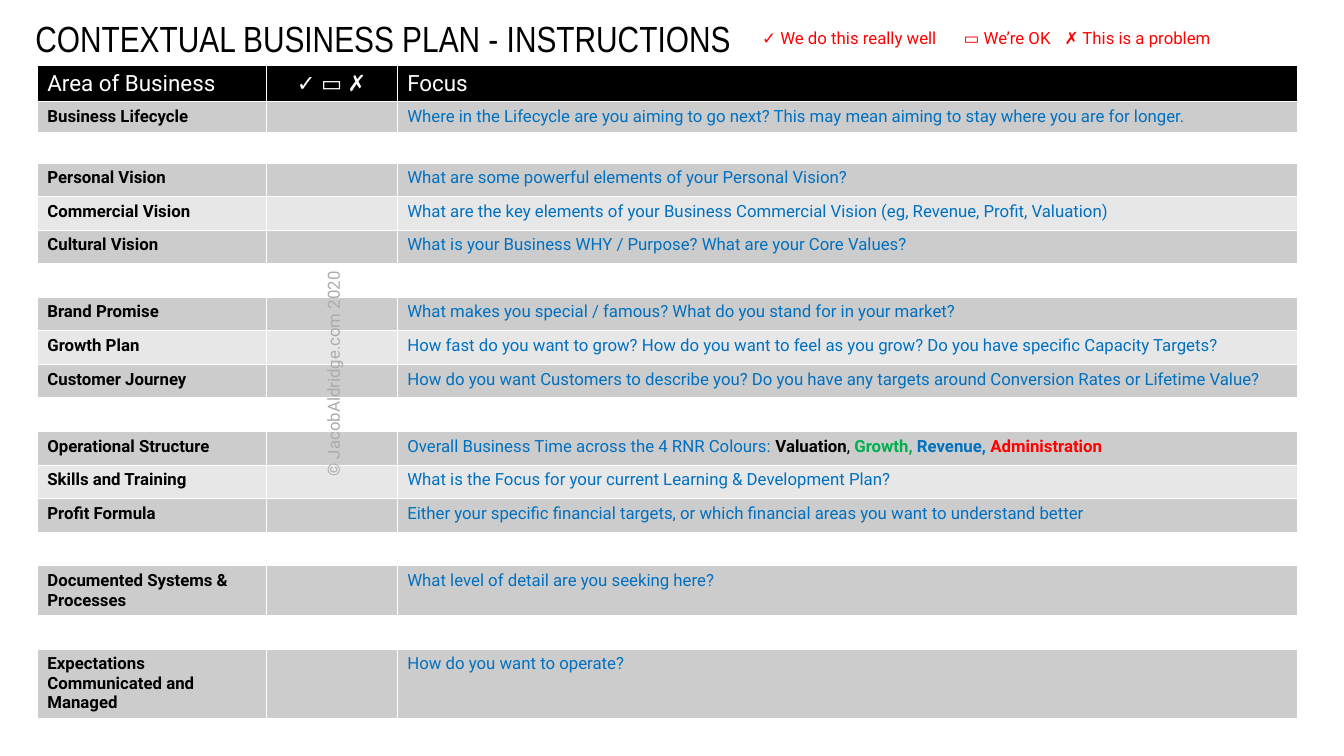
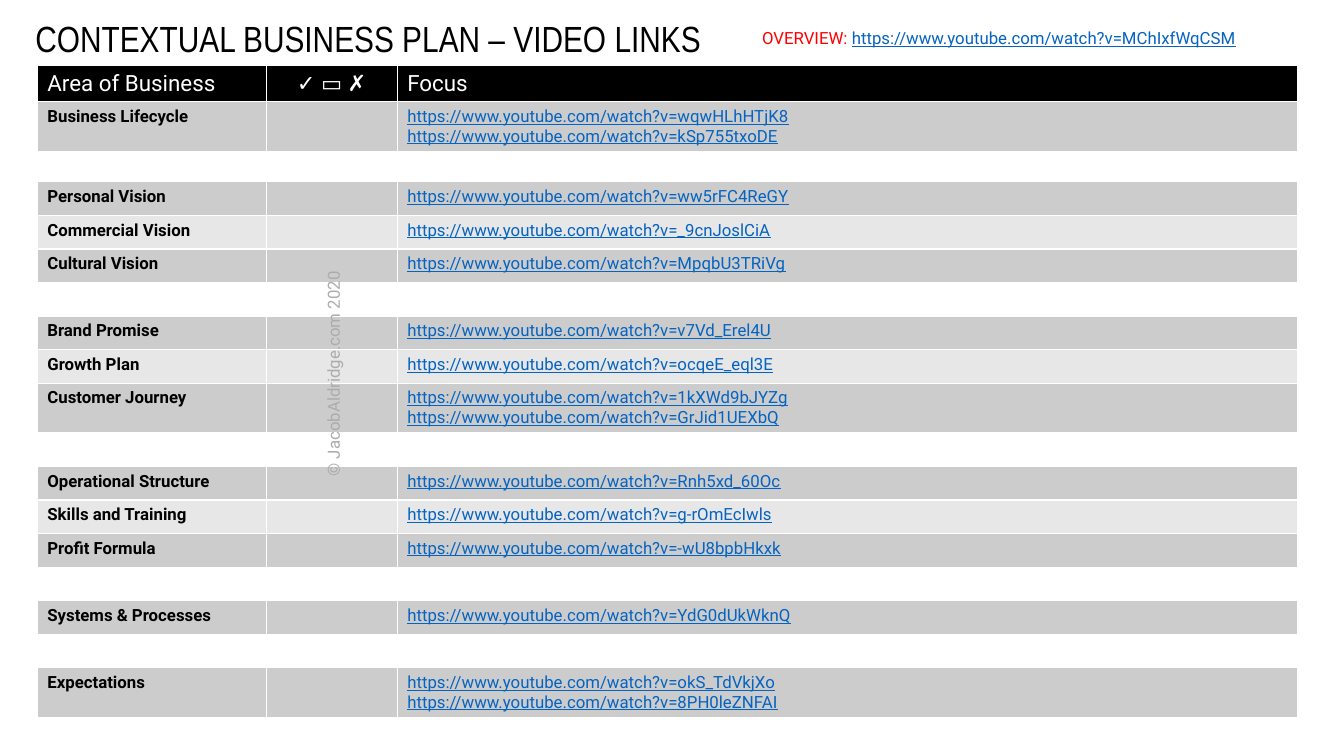
from lxml import etree
from pptx import Presentation
from pptx.dml.color import RGBColor
from pptx.enum import text
from pptx.oxml.ns import qn
from pptx.util import Inches, Pt

BLACK, WHITE, RED, BLUE = "000000", "FFFFFF", "FF0000", "0070C0"
GREEN, LINK, GREY = "00B050", "0563C1", "AFABAB"
DARK, LIGHT = "CCCCCC", "E7E7E7"
VIDEO = "https://www.youtube.com/watch?v="

HEADS = ["Area of Business", "✓ ▭ ✗", "Focus"]
WIDTHS = [2.27, 1.3, 8.93]

# A focus is a list of lines; a line is a list of (text, colour, bold) runs.
ASKS = [
    ("Business Lifecycle", "Where in the Lifecycle are you aiming to go next? "
     "This may mean aiming to stay where you are for longer."),
    None,
    ("Personal Vision", "What are some powerful elements of your Personal Vision?"),
    ("Commercial Vision", "What are the key elements of your Business Commercial Vision "
     "(eg, Revenue, Profit, Valuation)"),
    ("Cultural Vision", "What is your Business WHY / Purpose? What are your Core Values?"),
    None,
    ("Brand Promise", "What makes you special / famous? What do you stand for in your market?"),
    ("Growth Plan", "How fast do you want to grow? How do you want to feel as you grow? "
     "Do you have specific Capacity Targets?"),
    ("Customer Journey", "How do you want Customers to describe you? "
     "Do you have any targets around Conversion Rates or Lifetime Value?"),
    None,
    ("Operational Structure", "Overall Business Time across the 4 RNR Colours: "),
    ("Skills and Training", "What is the Focus for your current Learning & Development Plan?"),
    ("Profit Formula", "Either your specific financial targets, "
     "or which financial areas you want to understand better"),
    None,
    ("Documented Systems & Processes", "What level of detail are you seeking here?"),
    None,
    ("Expectations Communicated and Managed", "How do you want to operate?"),
]
TIMES = [("Valuation", BLACK, True), (", ", BLACK, False), ("Growth, ", GREEN, True),
         ("Revenue,", BLUE, True), (" Administration", RED, True)]
CLIPS = [
    ("Business Lifecycle", "wqwHLhHTjK8", "kSp755txoDE"),
    None,
    ("Personal Vision", "ww5rFC4ReGY"),
    ("Commercial Vision", "_9cnJoslCiA"),
    ("Cultural Vision", "MpqbU3TRiVg"),
    None,
    ("Brand Promise", "v7Vd_Erel4U"),
    ("Growth Plan", "ocqeE_eql3E"),
    ("Customer Journey", "1kXWd9bJYZg", "GrJid1UEXbQ"),
    None,
    ("Operational Structure", "Rnh5xd_60Oc"),
    ("Skills and Training", "g-rOmEcIwls"),
    ("Profit Formula", "-wU8bpbHkxk"),
    None,
    ("Systems & Processes", "YdG0dUkWknQ"),
    None,
    ("Expectations", "okS_TdVkjXo", "8PH0leZNFAI"),
]

asks = [row and (row[0], [[(row[1], BLUE, False)]]) for row in ASKS]
dict(filter(None, asks))["Operational Structure"][0].extend(TIMES)
clips = [row and (row[0], [[(VIDEO + clip, LINK, False)] for clip in row[1:]])
         for row in CLIPS]

SLIDES = [
    ("CONTEXTUAL BUSINESS PLAN - INSTRUCTIONS", asks,
     [("✓ We do this really well\t▭ We’re OK\t✗ This is a problem", RED, False)]),
    ("CONTEXTUAL BUSINESS PLAN – VIDEO LINKS", clips,
     [("OVERVIEW: ", RED, False), (VIDEO + "MChIxfWqCSM", LINK, False)]),
]


def rgb(code):
    return RGBColor.from_string(code)


def write(frame, lines, size=12, face="Roboto"):
    """Fill a text frame with lines of (text, colour, bold) runs."""
    for i, line in enumerate(lines):
        para = frame.add_paragraph() if i else frame.paragraphs[0]
        para.font.size, para.font.name = Pt(size), face
        for words, color, bold in line:
            run = para.add_run()
            run.text = words
            run.font.color.rgb = rgb(color)
            run.font.bold = bold
            if color == LINK:
                run.font.underline = True


deck = Presentation()
deck.slide_width, deck.slide_height = Inches(13.33), Inches(7.5)

for name, rows, note in SLIDES:
    slide = deck.slides.add_slide(deck.slide_layouts[5])
    title = slide.shapes.title
    title.left, title.top = Inches(0.25), Inches(0.11)
    title.width, title.height = Inches(7.2), Inches(0.54)
    frame = title.text_frame
    frame.auto_size = text.MSO_AUTO_SIZE.NONE
    frame.vertical_anchor = text.MSO_ANCHOR.MIDDLE
    write(frame, [[(name, BLACK, False)]], 26, "Arial Narrow")
    frame.paragraphs[0].alignment = text.PP_ALIGN.LEFT

    table = slide.shapes.add_table(len(rows) + 1, len(WIDTHS), Inches(0.37), Inches(0.65),
                                   Inches(12.5), Inches(6.5)).table
    for col, width in zip(table.columns, WIDTHS):
        col.width = Inches(width)
    for i, line in enumerate(table.rows):
        # Rows grow from these heights when their text wraps.
        line.height = Inches(0.36 if i == 0 else 0.3 if i < 3 else 1 / 3)
        row = rows[i - 1] if i else None
        if i == 0:
            fill, size = BLACK, 16
            cells = [[[(head, WHITE, False)]] for head in HEADS]
        elif row:
            fill, size = DARK if i % 2 else LIGHT, 12
            cells = [[[(row[0], BLACK, True)]], None, row[1]]
        else:
            fill, size = WHITE, 12
            cells = [None] * 3
        for cell, lines in zip(line.cells, cells):
            cell.fill.solid()
            cell.fill.fore_color.rgb = rgb(fill)
            if lines:
                write(cell.text_frame, lines, size)
            else:
                # An empty cell takes its height from the end mark.
                para = cell.text_frame.paragraphs[0]
                etree.SubElement(para._p, qn("a:endParaRPr"), sz="1200")
    table.cell(0, 1).text_frame.paragraphs[0].alignment = text.PP_ALIGN.CENTER

    for left, top, width, turn, runs in [
        (7.46, 0.23, 5.34, 0, note),
        (2.15, 3.52, 2.31, 270, [("© JacobAldridge.com 2020", GREY, False)]),
    ]:
        box = slide.shapes.add_textbox(Inches(left), Inches(top), Inches(width), Inches(0.3))
        box.rotation = turn
        box.text_frame.word_wrap = True
        write(box.text_frame, [runs])

deck.save("out.pptx")
